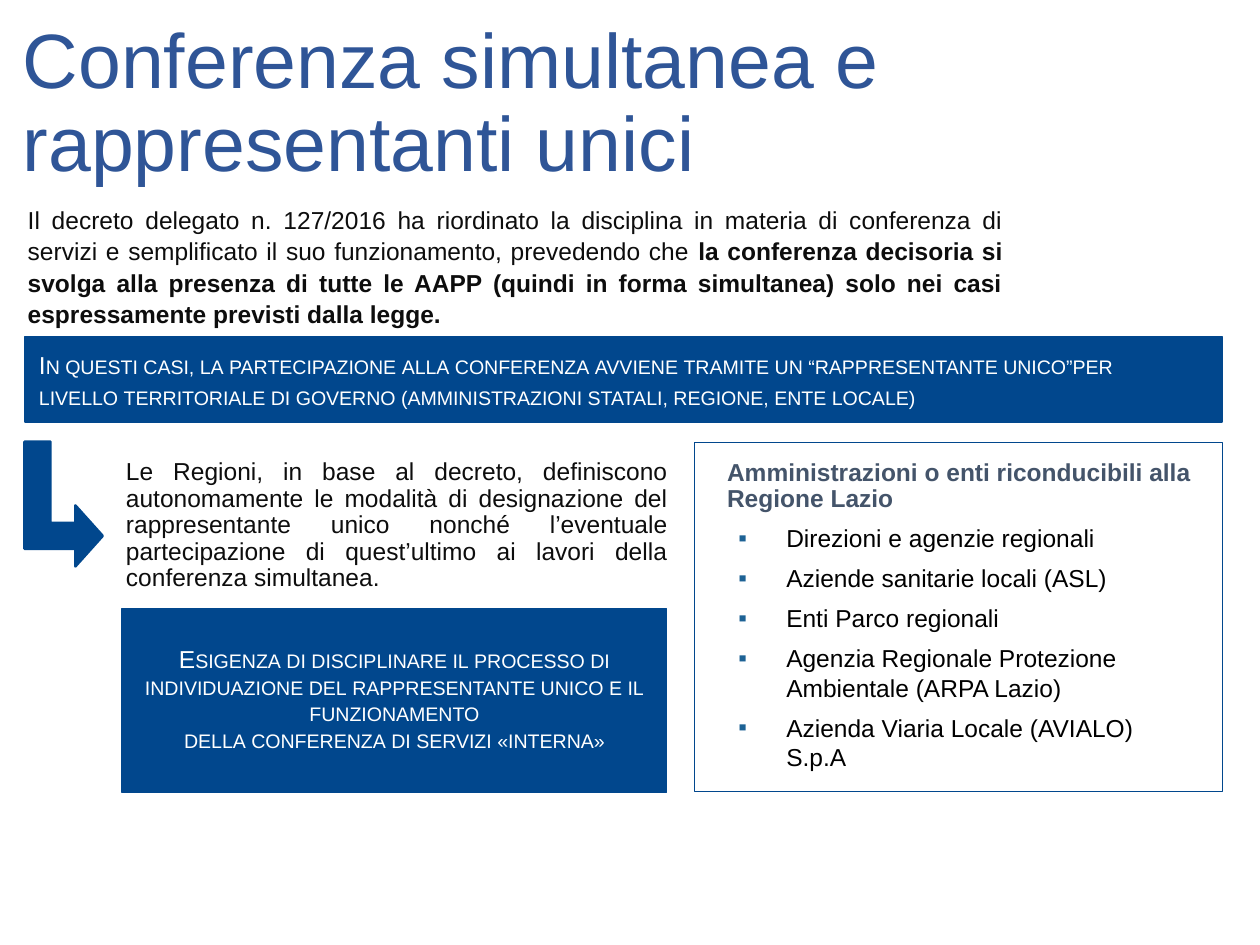
"""Build the slide on simultaneous conferences and single representatives."""
from dataclasses import dataclass

from lxml import etree
from pptx import Presentation
from pptx.dml.color import RGBColor
from pptx.enum import shapes, text
from pptx.oxml import ns
from pptx.util import Inches, Pt


@dataclass(frozen=True)
class Theme:
    """Colours, font and type sizes of the slide."""
    font: str = "Arial"
    title_size: int = 44
    body_size: int = 14
    title: str = "2F5597"
    body: str = "0D0D0D"
    heading: str = "44546A"
    item: str = "000000"
    bullet: str = "1D6295"
    blue: str = "01478D"
    white: str = "FFFFFF"


THEME = Theme()
DECREE = (
    "Il decreto delegato n. 127/2016 ha riordinato la disciplina in materia di "
    "conferenza di servizi e semplificato il suo funzionamento, prevedendo che ")
DECREE_RULE = (
    "la conferenza decisoria si svolga alla presenza di tutte le AAPP (quindi in "
    "forma simultanea) solo nei casi espressamente previsti dalla legge.")
PARTICIPATION = (
    "In questi casi, la partecipazione alla conferenza avviene tramite un "
    "“rappresentante unico”per livello territoriale di governo "
    "(amministrazioni statali, regione, ente locale)")
REGIONS = (
    "Le Regioni, in base al decreto, definiscono autonomamente le modalità di "
    "designazione del rappresentante unico nonché l’eventuale partecipazione di "
    "quest’ultimo ai lavori della conferenza simultanea.")
NEED = (
    "Esigenza di disciplinare il processo di individuazione del rappresentante "
    "unico e il funzionamento\vdella conferenza di servizi «interna»")
BODIES_HEADING = "Amministrazioni o enti riconducibili alla Regione Lazio"
BODIES = (
    "Direzioni e agenzie regionali",
    "Aziende sanitarie locali (ASL)",
    "Enti Parco regionali",
    "Agenzia Regionale Protezione Ambientale (ARPA Lazio)",
    "Azienda Viaria Locale (AVIALO) S.p.A",
)


def format_run(run, color, size=THEME.body_size, bold=False, small_caps=False):
    """Apply the theme font and the given look to one run."""
    run.font.name = THEME.font
    run.font.size = Pt(size)
    run.font.bold = bold
    run.font.color.rgb = RGBColor.from_string(color)
    if small_caps:
        run.font._element.set("cap", "small")


def format_paragraph(paragraph, color, align=text.PP_ALIGN.LEFT, spacing=0.9, after=0, **look):
    """Set alignment, spacing and run look of a paragraph."""
    paragraph.alignment = align
    paragraph.line_spacing = spacing
    paragraph.space_before = Pt(0)
    paragraph.space_after = Pt(after)
    for run in paragraph.runs:
        format_run(run, color, **look)


def set_bullet(paragraph, char=None, margin=0, indent=0):
    """Give a paragraph its indents and a coloured bullet, or none."""
    properties = paragraph._p.get_or_add_pPr()
    properties.set("marL", str(Inches(margin)))
    properties.set("indent", str(Inches(indent)))
    if char is None:
        etree.SubElement(properties, ns.qn("a:buNone"))
        return
    color = etree.SubElement(properties, ns.qn("a:buClr"))
    etree.SubElement(color, ns.qn("a:srgbClr"), val=THEME.bullet)
    etree.SubElement(properties, ns.qn("a:buFont"), typeface=THEME.font)
    etree.SubElement(properties, ns.qn("a:buChar"), char=char)


def set_frame(frame, insets, anchor=text.MSO_ANCHOR.TOP):
    """Set wrapping, insets (left, top, right, bottom) and anchor of a frame."""
    frame.word_wrap = True
    frame.auto_size = text.MSO_AUTO_SIZE.NONE
    frame.vertical_anchor = anchor
    (frame.margin_left, frame.margin_top,
     frame.margin_right, frame.margin_bottom) = map(Inches, insets)


def fill_placeholder(placeholder, box, anchor):
    """Move a placeholder and return its frame, ready for text."""
    (placeholder.left, placeholder.top,
     placeholder.width, placeholder.height) = map(Inches, box)
    set_frame(placeholder.text_frame, (0.1, 0.05, 0.1, 0.05), anchor)
    return placeholder.text_frame


def add_text(slide, box, insets):
    """Add a wrapping text box and return its frame."""
    frame = slide.shapes.add_textbox(*map(Inches, box)).text_frame
    set_frame(frame, insets)
    return frame


def add_panel(slide, kind, box, fill, line_width):
    """Add a flat preset shape with a blue outline."""
    panel = slide.shapes.add_shape(kind, *map(Inches, box))
    panel.shadow.inherit = False
    panel.fill.solid()
    panel.fill.fore_color.rgb = RGBColor.from_string(fill)
    panel.line.color.rgb = RGBColor.from_string(THEME.blue)
    panel.line.width = Pt(line_width)
    return panel


def add_banner(slide, box, wording, insets, **layout):
    """Add a blue rectangle with white small-caps text."""
    banner = add_panel(slide, shapes.MSO_SHAPE.RECTANGLE, box, THEME.blue, 1)
    set_frame(banner.text_frame, insets, text.MSO_ANCHOR.MIDDLE)
    paragraph = banner.text_frame.paragraphs[0]
    paragraph.text = wording
    format_paragraph(paragraph, THEME.white, small_caps=True, **layout)


def add_arrow(slide):
    """Add the bent arrow leading from the banner to the regions."""
    arrow = add_panel(slide, shapes.MSO_SHAPE.BENT_UP_ARROW,
                      (0.01, 3.69, 0.99, 0.62), THEME.blue, 1.5)
    arrow.rotation = 90
    for index, value in enumerate((0.33, 0.39, 0.35)):
        arrow.adjustments[index] = value


def add_bodies(slide):
    """Add the outlined panel listing the regional bodies."""
    add_panel(slide, shapes.MSO_SHAPE.RECTANGLE, (5.51, 3.51, 4.19, 2.77), THEME.white, 0.5)
    frame = add_text(slide, (4.98, 3.53, 4.59, 2.86), (0.79, 0.12, 0.07, 0.07))
    frame.text = "\n".join((BODIES_HEADING, *BODIES))
    heading, *items = frame.paragraphs
    format_paragraph(heading, THEME.heading, after=6, bold=True)
    for item in items:
        set_bullet(item, "▪", 0.47, -0.38)
        format_paragraph(item, THEME.item, spacing=1.0, after=6)


def add_title_and_decree(slide):
    """Fill the title and body placeholders."""
    title = fill_placeholder(slide.shapes.title, (0.08, 0.11, 8.62, 1.45),
                             text.MSO_ANCHOR.MIDDLE)
    title.text = "Conferenza simultanea e rappresentanti unici"
    format_paragraph(title.paragraphs[0], THEME.title, size=THEME.title_size)

    decree = fill_placeholder(slide.placeholders[1], (0.12, 1.56, 7.94, 1.1),
                              text.MSO_ANCHOR.TOP)
    decree.text = DECREE
    paragraph = decree.paragraphs[0]
    rule = paragraph.add_run()
    rule.text = DECREE_RULE
    set_bullet(paragraph)
    format_paragraph(paragraph, THEME.body, text.PP_ALIGN.JUSTIFY, Pt(18))
    rule.font.bold = True


def add_regions(slide):
    """Add the paragraph on how the regions appoint representatives."""
    frame = add_text(slide, (0.9, 3.6, 4.4, 1.2), (0, 0.05, 0, 0.05))
    frame.text = REGIONS
    paragraph = frame.paragraphs[0]
    set_bullet(paragraph, margin=0.1)
    format_paragraph(paragraph, THEME.body, text.PP_ALIGN.JUSTIFY)


def main():
    """Build and save the slide."""
    deck = Presentation()
    deck.slide_width, deck.slide_height = Inches(10), Inches(7.5)
    slide = deck.slides.add_slide(deck.slide_layouts[1])
    add_title_and_decree(slide)
    add_banner(slide, (0.2, 2.67, 9.5, 0.68), PARTICIPATION,
               (0.11, 0, 0.73, 0), spacing=Pt(18))
    add_arrow(slide)
    add_regions(slide)
    add_banner(slide, (0.97, 4.83, 4.32, 1.46), NEED,
               (0.06, 0.06, 0.06, 0.06), align=text.PP_ALIGN.CENTER)
    add_bodies(slide)
    deck.save("out.pptx")


if __name__ == "__main__":
    main()
